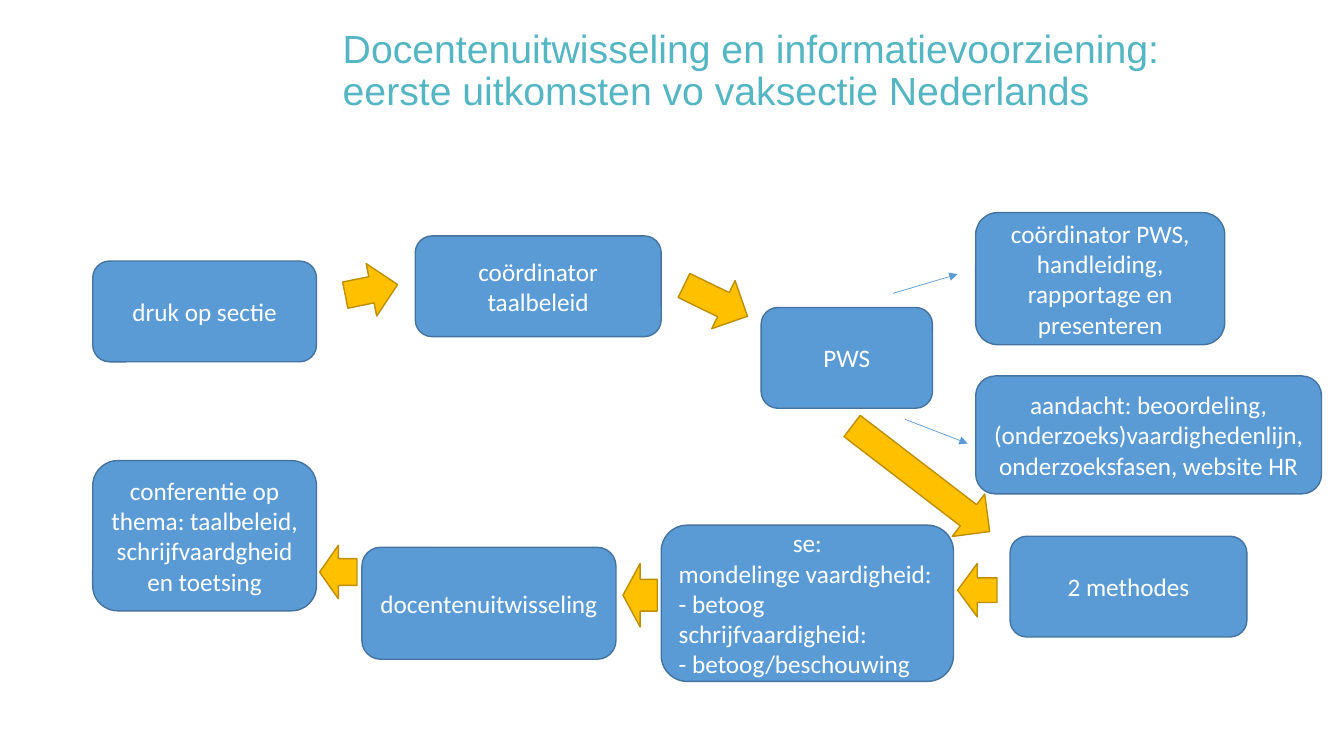
from pptx import Presentation
from pptx.dml.color import RGBColor
from pptx.enum.shapes import MSO_CONNECTOR, MSO_SHAPE
from pptx.enum.text import MSO_ANCHOR, MSO_AUTO_SIZE, PP_ALIGN
from pptx.oxml.ns import qn
from pptx.util import Inches, Pt
from lxml import etree

WIDE, HIGH = Inches(13.33), Inches(7.5)
ROUND = MSO_SHAPE.ROUNDED_RECTANGLE
DOWN, RIGHT = MSO_SHAPE.DOWN_ARROW, MSO_SHAPE.RIGHT_ARROW
STRAIGHT = MSO_CONNECTOR.STRAIGHT
LEFT, CENTER = PP_ALIGN.LEFT, PP_ALIGN.CENTER
MIDDLE, FIXED = MSO_ANCHOR.MIDDLE, MSO_AUTO_SIZE.NONE

COLORS = {"title": "54B6C3", "box": "5B9BD5", "edge": "43739E",
          "arrow": "FFC000", "rim": "BD8E00", "text": "FFFFFF"}
TITLE = ("Docentenuitwisseling en informatievoorziening: "
         "eerste uitkomsten vo vaksectie Nederlands")
BOXES = [
    ((6.9, 34.53, 16.65, 13.33), ["druk op sectie"]),
    ((30.9, 31.2, 18.3, 13.33), ["coördinator taalbeleid"]),
    ((56.63, 40.67, 12.75, 13.33), ["PWS"]),
    ((72.6, 28.13, 18.53, 17.47),
     ["coördinator PWS,", "handleiding, rapportage en presenteren"]),
    ((72.6, 49.73, 25.73, 15.6),
     ["aandacht: beoordeling, (onderzoeks)vaardighedenlijn, "
      "onderzoeksfasen, website HR"]),
    ((75.15, 70.93, 17.63, 13.33), ["2 methodes"]),
    ((26.93, 72.4, 18.9, 14.8), ["docentenuitwisseling"]),
    ((6.9, 60.93, 16.65, 19.87),
     ["conferentie op thema: taalbeleid, schrijfvaardgheid en toetsing"]),
]
EXAM = ((49.2, 69.47, 21.75, 20.67),
        ["se:", "mondelinge vaardigheid:\n- betoog",
         "schrijfvaardigheid:", "- betoog/beschouwing"])
ARROWS = [
    (DOWN, (25.65, 34.8, 3.98, 7.07), 258.6, 0.5),
    (RIGHT, (50.63, 36.27, 5.25, 7.07), 25.9, 0.5),
    (DOWN, (66.53, 51.87, 3.98, 22.93), 307.5, 0.5),
    (RIGHT, (71.25, 74.53, 2.93, 7.07), 180, 0.46),
    (RIGHT, (46.35, 74.53, 2.55, 8.4), 180, 0.5),
    (RIGHT, (23.78, 72.13, 2.78, 7.07), 180, 0.5),
]
LINES = [(66.45, 38.8, 71.25, 36.27), (67.35, 55.47, 72, 58.67)]


def color(name):
    """Return the named colour."""
    return RGBColor.from_string(COLORS[name])


def place(area):
    """Turn percentages of the slide's width and height into lengths."""
    return [int(side * part / 100)
            for side, part in zip((WIDE, HIGH, WIDE, HIGH), area)]


def write(para, text, font, size, tint, align):
    """Add text to a paragraph run by run, with a break at each newline."""
    para.alignment = align
    for row, part in enumerate(text.split("\n")):
        if row:
            para.add_line_break()
        run = para.add_run()
        run.text = part
        run.font.name, run.font.size = font, Pt(size)
        run.font.color.rgb = color(tint)


def add_title(slide):
    """Move and fill the title placeholder."""
    title = slide.shapes.title
    title.left, title.top, title.width, title.height = place(
        (24.75, 5.6, 68.4, 7.87))
    frame = title.text_frame
    frame.auto_size, frame.word_wrap = FIXED, True
    frame.vertical_anchor = MIDDLE
    para = frame.paragraphs[0]
    para.line_spacing = 0.9
    write(para, TITLE, "Arial", 28, "title", LEFT)


def add_form(slide, kind, area, fill, edge):
    """Add a filled and outlined preset shape."""
    form = slide.shapes.add_shape(kind, *place(area))
    form.shadow.inherit = False
    form.fill.solid()
    form.fill.fore_color.rgb = color(fill)
    form.line.color.rgb = color(edge)
    form.line.width = Pt(1)
    return form


def add_box(slide, area, texts, align=CENTER):
    """Add a rounded box whose first paragraph is centred."""
    frame = add_form(slide, ROUND, area, "box", "edge").text_frame
    frame.word_wrap, frame.vertical_anchor = True, MIDDLE
    for row, text in enumerate(texts):
        para = frame.add_paragraph() if row else frame.paragraphs[0]
        write(para, text, "Calibri", 18, "text", align if row else CENTER)


def add_arrow(slide, kind, area, turn, shaft):
    """Add a turned block arrow."""
    arrow = add_form(slide, kind, area, "arrow", "rim")
    arrow.rotation = turn
    arrow.adjustments[0] = shaft


def add_line(slide, ends):
    """Add a thin line with a triangle at its end."""
    line = slide.shapes.add_connector(STRAIGHT, *place(ends))
    line.line.color.rgb = color("box")
    line.line.width = Pt(0.5)
    tip = etree.SubElement(line.line._get_or_add_ln(), qn("a:tailEnd"))
    tip.set("type", "triangle")
    etree.SubElement(line._element.spPr, qn("a:effectLst"))


def main():
    """Build and save the slide."""
    deck = Presentation()
    deck.slide_width, deck.slide_height = WIDE, HIGH
    slide = deck.slides.add_slide(deck.slide_layouts[5])
    add_title(slide)
    for area, texts in BOXES:
        add_box(slide, area, texts)
    add_box(slide, *EXAM, align=LEFT)
    for arrow in ARROWS:
        add_arrow(slide, *arrow)
    for ends in LINES:
        add_line(slide, ends)
    deck.save("out.pptx")


if __name__ == "__main__":
    main()
